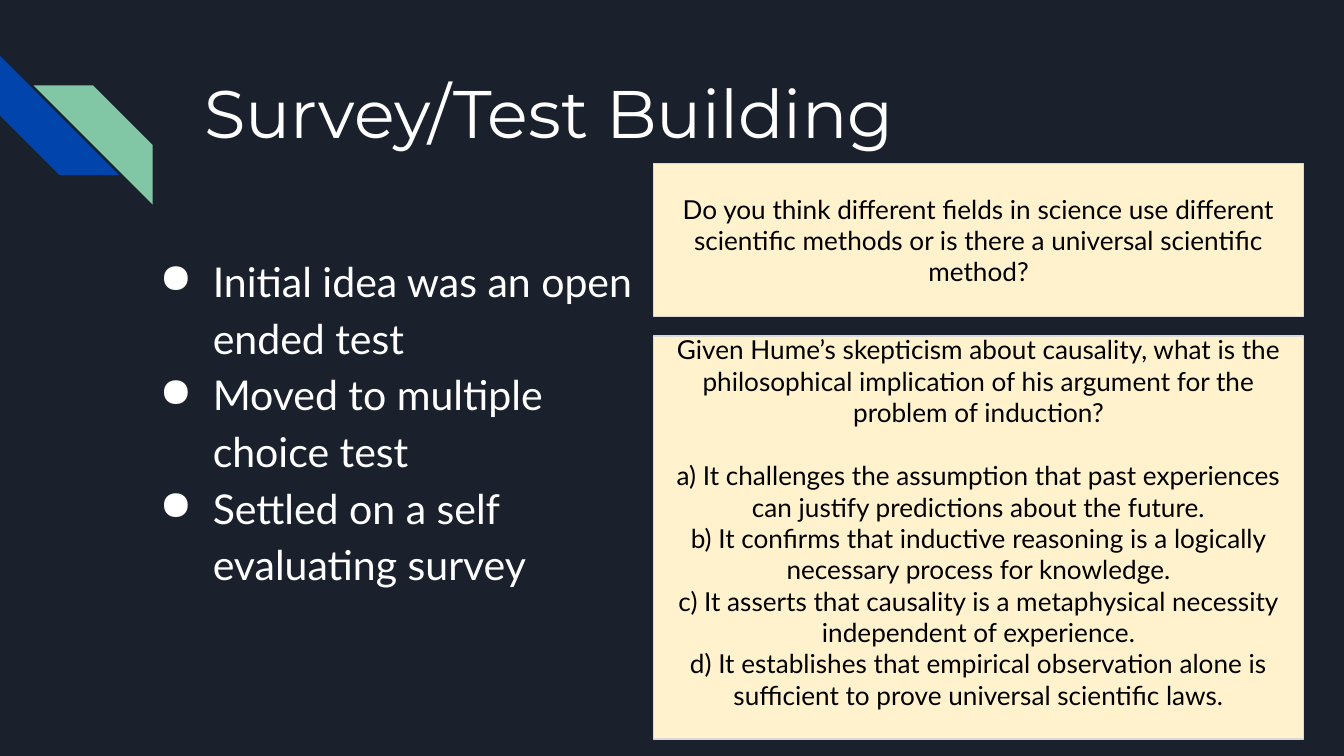
from dataclasses import dataclass

from lxml import etree
from pptx import Presentation
from pptx import util as u
from pptx.dml.color import RGBColor
from pptx.enum import shapes, text
from pptx.oxml import ns

PX = 9525  # EMU per px, 96 px to the inch
PAD = 10
NAVY = RGBColor(0x1B, 0x21, 0x2C)
BLUE = RGBColor(0x01, 0x45, 0xAC)
GREEN = RGBColor(0x82, 0xC7, 0xA5)
CREAM = RGBColor(0xFF, 0xF2, 0xCC)
GREY = RGBColor(0xD9, 0xD9, 0xD9)
WHITE = RGBColor(0xFF, 0xFF, 0xFF)
BLACK = RGBColor(0, 0, 0)


@dataclass
class Box:
    x: int
    y: int
    w: int
    h: int

    def emu(self) -> list[int]:
        return [n * PX for n in (self.x, self.y, self.w, self.h)]


@dataclass
class Stripe:
    box: Box
    turn: int
    color: RGBColor


@dataclass
class Card:
    box: Box
    lines: list[str]
    gap: int = 0  # points below the question
    foot: int = PAD  # bottom inset in px


STRIPES = [
    Stripe(Box(0, 40, 85, 85), 270, BLUE),
    Stripe(Box(24, 61, 85, 85), 90, GREEN),
]
TITLE = "Survey/Test Building"
POINTS = [
    "Initial idea was an open ended test",
    "Moved to multiple choice test",
    "Settled on a self evaluating survey",
]
CARDS = [
    Card(Box(467, 117, 464, 109), [
        "Do you think different fields in science use different scientific "
        "methods or is there a universal scientific method?",
    ]),
    Card(Box(467, 240, 464, 288), [
        "Given Hume’s skepticism about causality, what is the philosophical "
        "implication of his argument for the problem of induction?",
        "a) It challenges the assumption that past experiences can justify "
        "predictions about the future.",
        "b) It confirms that inductive reasoning is a logically necessary "
        "process for knowledge.",
        "c) It asserts that causality is a metaphysical necessity "
        "independent of experience.",
        "d) It establishes that empirical observation alone is sufficient "
        "to prove universal scientific laws.",
    ], gap=17, foot=32),
]


def write(shape, lines: list[str], face: str, size: int, color: RGBColor,
          foot: int = PAD) -> list:
    frame = shape.text_frame
    frame.word_wrap = True
    frame.margin_left = frame.margin_top = frame.margin_right = PAD * PX
    frame.margin_bottom = foot * PX
    frame.text = "\n".join(lines)
    for para in frame.paragraphs:
        para.font.name = face
        para.font.size = u.Pt(size)
        para.font.color.rgb = color
    return list(frame.paragraphs)


def bullet(para) -> None:
    props = para._p.get_or_add_pPr()
    props.set("marL", str(48 * PX))
    props.set("indent", str(-38 * PX))
    tint = etree.Element(ns.qn("a:buClr"))
    etree.SubElement(tint, ns.qn("a:srgbClr"), val=str(WHITE))
    mark = etree.Element(ns.qn("a:buChar"), char="●")
    # Bullet tags sit after line spacing and before the font
    font = props.find(ns.qn("a:defRPr"))
    font.addprevious(tint)
    font.addprevious(mark)


def draw_stripe(slide, stripe: Stripe) -> None:
    shape = slide.shapes.add_shape(
        shapes.MSO_SHAPE.DIAGONAL_STRIPE, *stripe.box.emu())
    shape.shadow.inherit = False
    shape.rotation = stripe.turn
    shape.fill.solid()
    shape.fill.fore_color.rgb = stripe.color
    shape.line.fill.background()


def draw_card(slide, card: Card) -> None:
    shape = slide.shapes.add_shape(
        shapes.MSO_SHAPE.RECTANGLE, *card.box.emu())
    shape.shadow.inherit = False
    shape.fill.solid()
    shape.fill.fore_color.rgb = CREAM
    shape.line.color.rgb = GREY
    shape.line.width = u.Pt(0.75)
    shape.text_frame.vertical_anchor = text.MSO_ANCHOR.MIDDLE
    paras = write(shape, card.lines, "Lato", 14, BLACK, card.foot)
    for para in paras:
        para.alignment = text.PP_ALIGN.CENTER
    paras[0].space_after = u.Pt(card.gap)


def main() -> None:
    deck = Presentation()
    deck.slide_width, deck.slide_height = 960 * PX, 540 * PX
    slide = deck.slides.add_slide(deck.slide_layouts[6])
    slide.background.fill.solid()
    slide.background.fill.fore_color.rgb = NAVY

    # Corner stripes
    for stripe in STRIPES:
        draw_stripe(slide, stripe)

    # Title
    title = slide.shapes.add_textbox(*Box(136, 41, 739, 96).emu())
    write(title, [TITLE], "Montserrat", 36, WHITE)

    # Bullet list
    body = slide.shapes.add_textbox(*Box(94, 168, 373, 305).emu())
    for para in write(body, POINTS, "Lato", 22, WHITE):
        para.line_spacing = 1.15
        bullet(para)

    # Sample questions
    for card in CARDS:
        draw_card(slide, card)

    deck.save("out.pptx")


if __name__ == "__main__":
    main()
